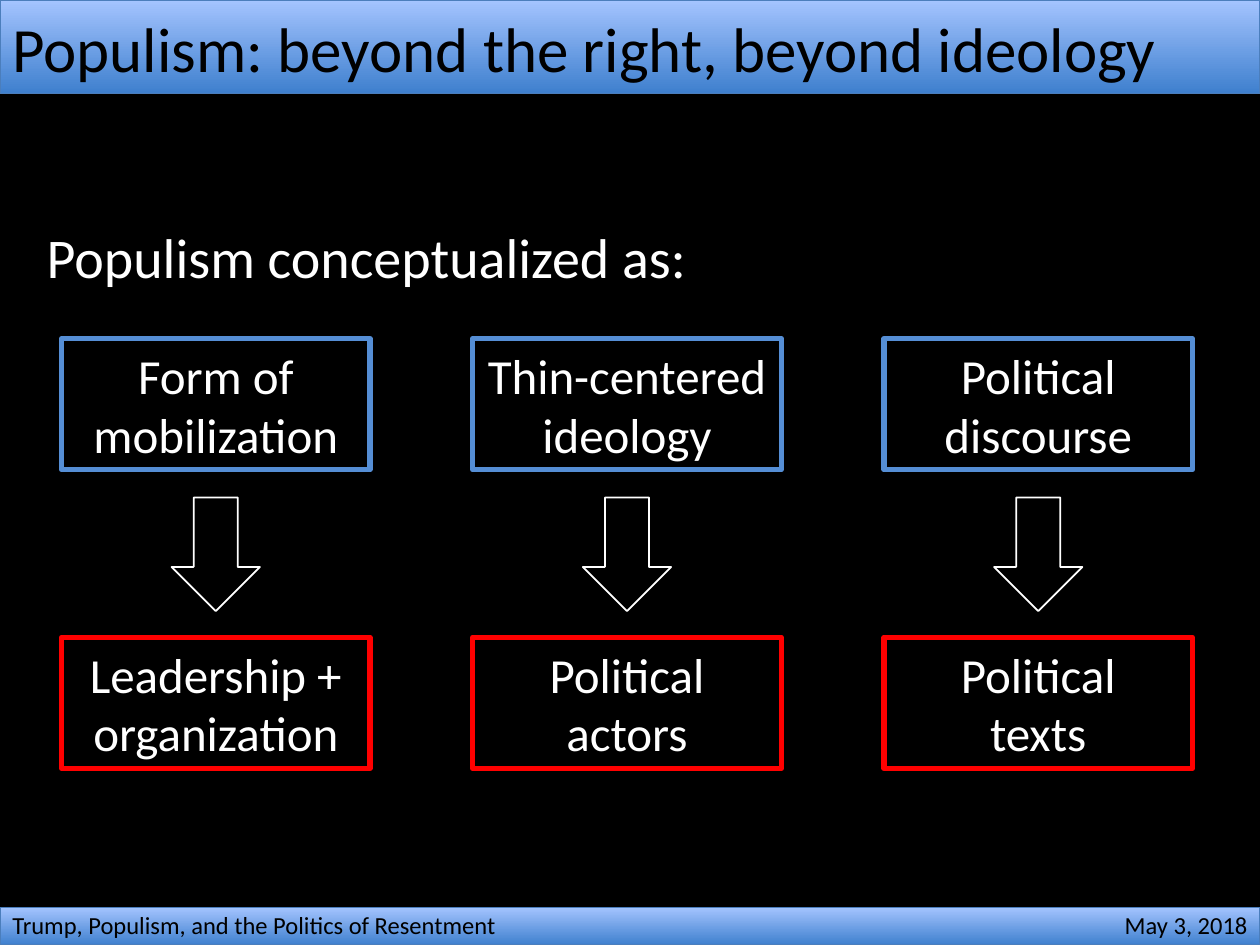
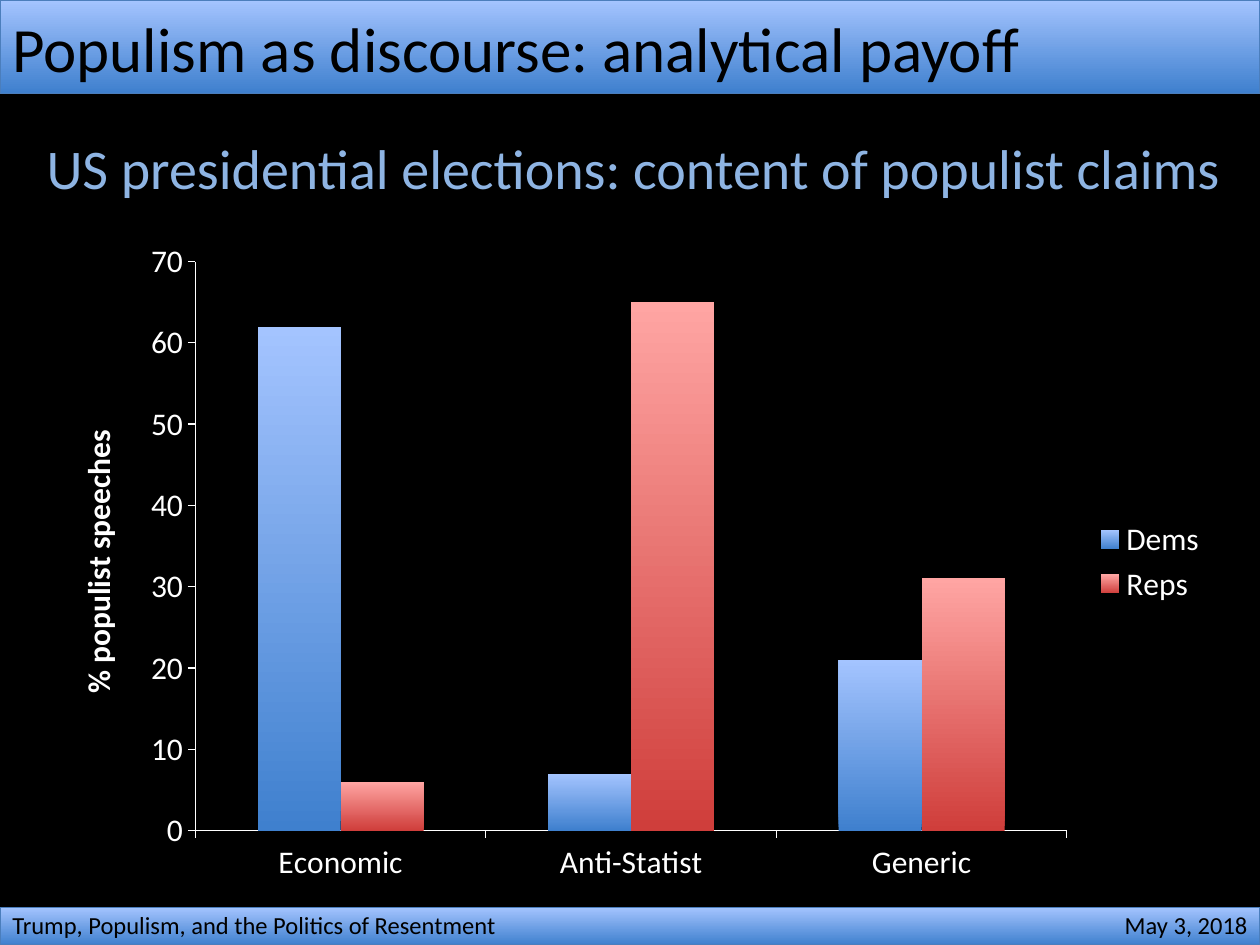
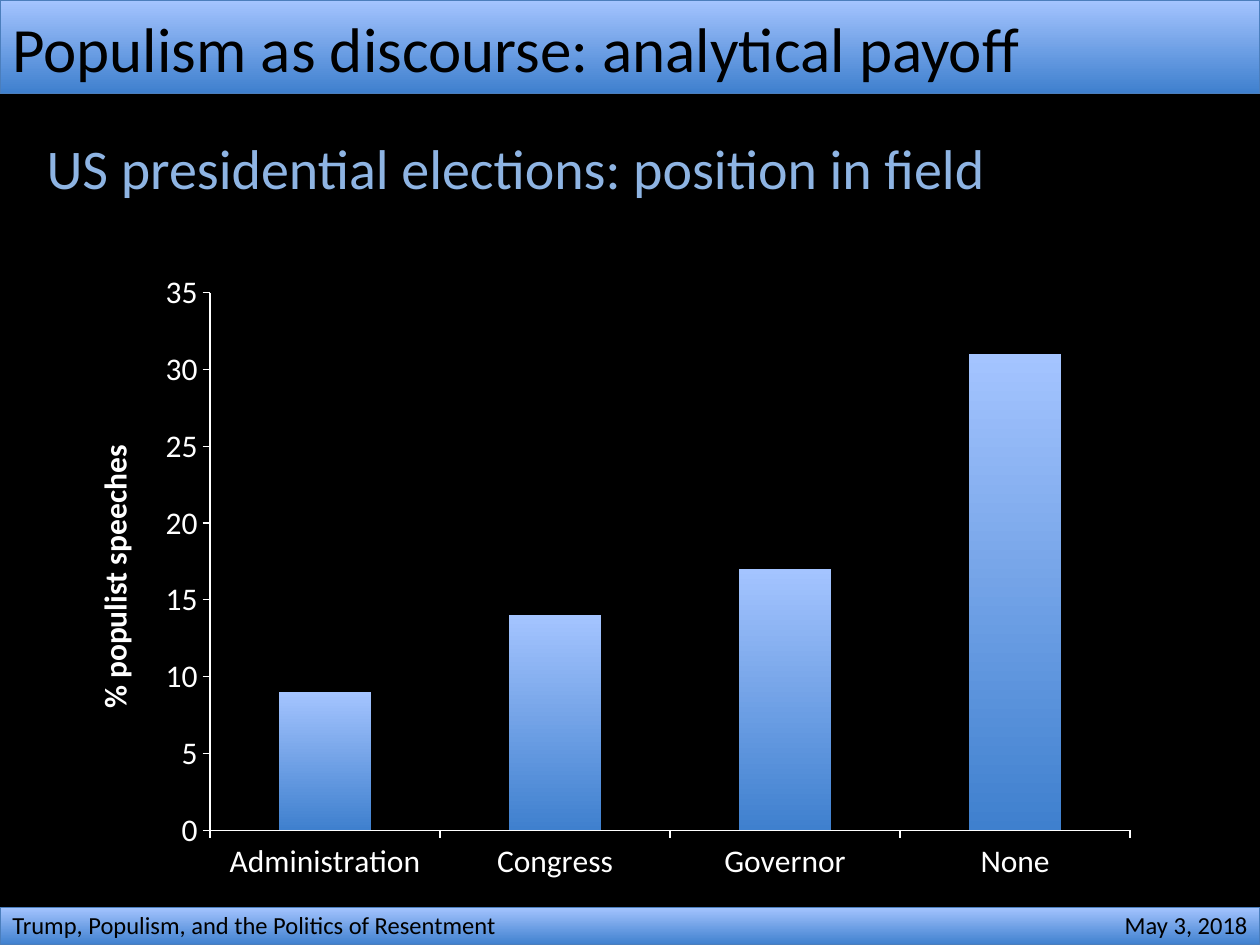
from pptx import Presentation
from pptx.chart.data import CategoryChartData
from pptx.dml.color import RGBColor
from pptx.enum.chart import XL_CHART_TYPE, XL_LEGEND_POSITION, XL_TICK_MARK
from pptx.enum.shapes import MSO_SHAPE
from pptx.enum.text import MSO_ANCHOR, PP_ALIGN
from pptx.util import Cm, Pt

BLACK = RGBColor(0x00, 0x00, 0x00)
WHITE = RGBColor(0xFF, 0xFF, 0xFF)
RED = RGBColor(0xFF, 0x00, 0x00)
BLUE = RGBColor(0x55, 0x8E, 0xD5)
PALE = RGBColor(0x8E, 0xB4, 0xE3)
EDGE = RGBColor(0x4B, 0x7E, 0xBC)
BLUES = (RGBColor(0x3F, 0x80, 0xCE), RGBColor(0xA4, 0xC4, 0xFF))
REDS = (RGBColor(0xCF, 0x3E, 0x3B), RGBColor(0xFF, 0xA5, 0xA3))

FONT = "Calibri"
WIDE, HIGH = 25.4, 19.05
TALK = "Trump, Populism, and the Politics of Resentment"
DATE = "May 3, 2018"
PAYOFF = "Populism as discourse: analytical payoff"


def style(item, **values):
    for name, value in values.items():
        setattr(item, name, value)


def shade(fill, pair):
    """Fill with a gradient that runs from the bottom colour to the top one."""
    fill.gradient()
    fill.gradient_angle = 90
    for stop, color in zip(fill.gradient_stops, pair):
        stop.color.rgb = color


class Deck:
    """Holds the shared style and the slide being built."""

    def __init__(self):
        self.show = Presentation()
        style(self.show, slide_width=Cm(WIDE), slide_height=Cm(HIGH))
        self.slide = None

    def start(self, title):
        self.slide = self.show.slides.add_slide(self.show.slide_layouts[6])
        fill = self.slide.background.fill
        fill.solid()
        fill.fore_color.rgb = BLACK
        for top, high in ((18.29, 0.76), (0, 1.88)):
            band = self.shape(MSO_SHAPE.RECTANGLE, (0, top, WIDE, high), EDGE, 0.75)
            shade(band.fill, BLUES)
        self.text(TALK, (0, 18.21, 10.41, 0.86), 14, BLACK)
        self.text(DATE, (22.38, 18.21, 3.02, 0.86), 14, BLACK, PP_ALIGN.RIGHT)
        self.text(title, (0, 0, WIDE, 1.9), 36, BLACK)

    def label(self, frame, text, size, color, align):
        style(frame, word_wrap=True, vertical_anchor=MSO_ANCHOR.MIDDLE, text=text)
        for para in frame.paragraphs:
            para.alignment = align
            style(para.font, name=FONT, size=Pt(size))
            para.font.color.rgb = color

    def text(self, text, place, size, color, align=PP_ALIGN.LEFT):
        box = self.slide.shapes.add_textbox(*map(Cm, place))
        self.label(box.text_frame, text, size, color, align)

    def shape(self, kind, place, color, width):
        shape = self.slide.shapes.add_shape(kind, *map(Cm, place))
        shape.shadow.inherit = False
        shape.fill.background()
        shape.line.color.rgb = color
        shape.line.width = Pt(width)
        return shape

    def box(self, text, place, color):
        shape = self.shape(MSO_SHAPE.RECTANGLE, place, color, 3)
        self.label(shape.text_frame, text, 28, WHITE, PP_ALIGN.CENTER)

    def head(self, text, top, color):
        self.text(text, (0.69, top, 24.71, 1.6), 32, color)

    def chart(self, place, groups, rows, top, step):
        """Draw columns; rows holds (name, values, gradient) for each series."""
        data = CategoryChartData()
        data.categories = groups
        for name, values, _ in rows:
            data.add_series(name, values)
        chart = self.slide.shapes.add_chart(
            XL_CHART_TYPE.COLUMN_CLUSTERED, *map(Cm, place), data).chart
        style(chart, has_title=False, has_legend=len(rows) > 1)
        style(chart.font, name=FONT, size=Pt(18))
        chart.font.color.rgb = WHITE
        if chart.has_legend:
            style(chart.legend, position=XL_LEGEND_POSITION.RIGHT,
                  include_in_layout=False)
        plot = chart.plots[0]
        style(plot, gap_width=150, overlap=0, vary_by_categories=False)
        for bars, (_, _, pair) in zip(plot.series, rows):
            shade(bars.format.fill, pair)
        for axis in (chart.category_axis, chart.value_axis):
            style(axis, has_major_gridlines=False,
                  major_tick_mark=XL_TICK_MARK.OUTSIDE,
                  minor_tick_mark=XL_TICK_MARK.NONE)
            axis.format.line.color.rgb = WHITE
            axis.format.line.width = Pt(0.75)
        axis = chart.value_axis
        style(axis, minimum_scale=0, maximum_scale=top, major_unit=step)
        frame = axis.axis_title.text_frame
        frame.text = "% populist speeches"
        font = frame.paragraphs[0].runs[0].font
        style(font, name=FONT, size=Pt(18), bold=True)
        font.color.rgb = WHITE


def concepts(deck):
    deck.start("Populism: beyond the right, beyond ideology")
    deck.head("Populism conceptualized as:", 4.36, WHITE)
    pairs = (
        ("Form of mobilization", "Leadership + organization"),
        ("Thin-centered ideology", "Political\nactors"),
        ("Political discourse", "Political\ntexts"),
    )
    wide, high, tip = 6.22, 2.64, 1.78
    for i, (view, source) in enumerate(pairs):
        left = 1.24 + i * 8.29
        deck.box(view, (left, 6.83, wide, high), BLUE)
        deck.box(source, (left, 12.85, wide, high), RED)
        deck.shape(MSO_SHAPE.DOWN_ARROW,
                   (left + (wide - tip) / 2, 10.03, tip, 2.29), WHITE, 1)


def claims(deck):
    deck.start(PAYOFF)
    deck.chart((0.97, 4.62, 23.62, 13.41), ("Economic", "Anti-Statist", "Generic"),
               (("Dems", (62, 7, 21), BLUES), ("Reps", (6, 65, 31), REDS)), 70, 10)
    deck.head("US presidential elections: content of populist claims", 2.57, PALE)


def field(deck):
    deck.start(PAYOFF)
    deck.chart((1.3, 5.26, 21.92, 12.75),
               ("Administration", "Congress", "Governor", "None"),
               (("Series 1", (9, 14, 17, 31), BLUES),), 35, 5)
    deck.head("US presidential elections: position in field", 2.57, PALE)


def main():
    deck = Deck()
    for build in (concepts, claims, field):
        build(deck)
    deck.show.save("out.pptx")


if __name__ == "__main__":
    main()
